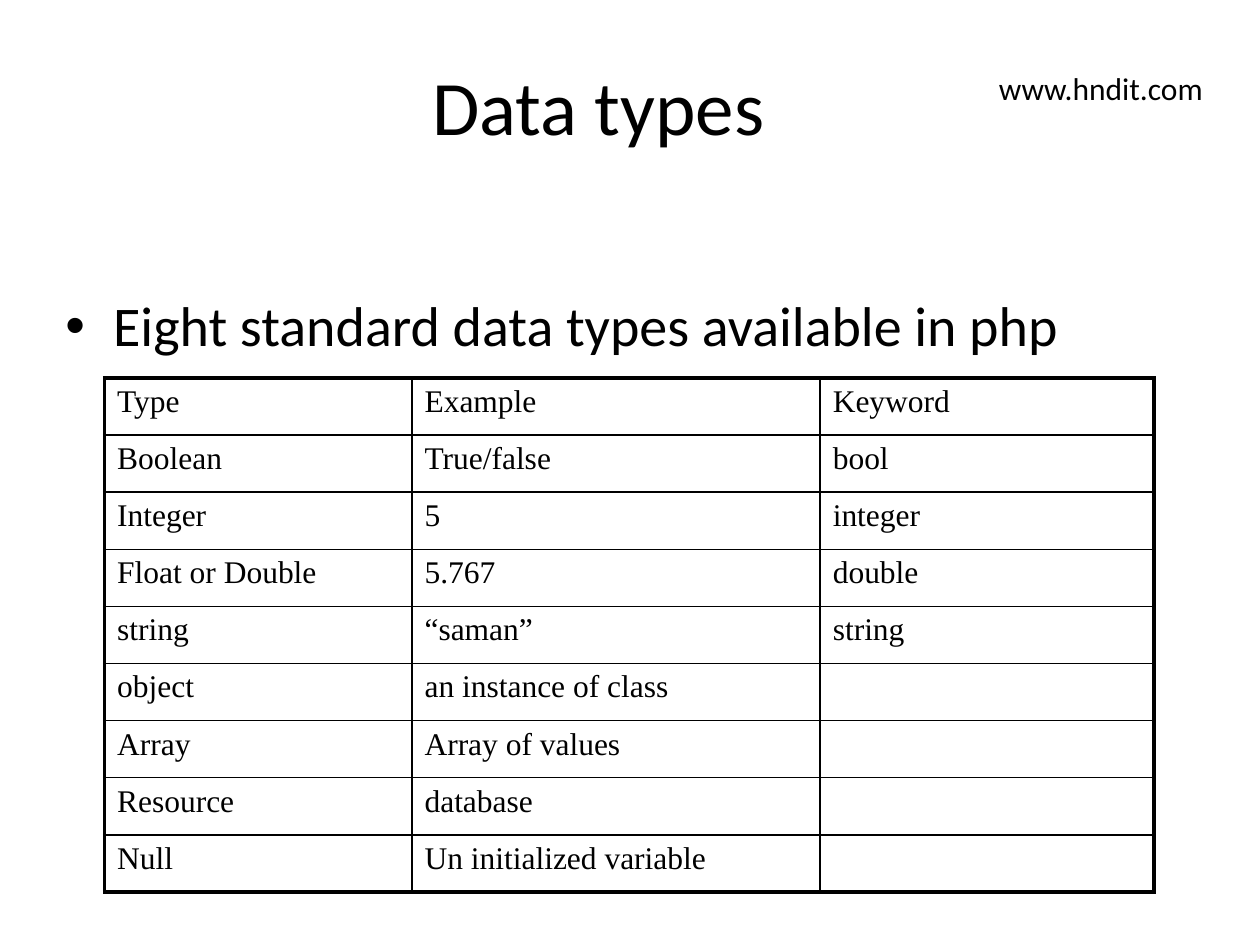
from pptx import Presentation
from pptx.dml.color import RGBColor
from pptx.enum.text import MSO_ANCHOR, PP_ALIGN
from pptx.oxml import parse_xml
from pptx.oxml.ns import nsdecls
from pptx.util import Inches, Pt

LEFT, CENTER = PP_ALIGN.LEFT, PP_ALIGN.CENTER
TOP, MIDDLE = MSO_ANCHOR.TOP, MSO_ANCHOR.MIDDLE

TITLE = "Data types"
SITE = "www.hndit.com"
POINT = "Eight standard data types available in php"
ROWS = [
    ("Type", "Example", "Keyword"),
    ("Boolean", "True/false", "bool"),
    ("Integer", "5", "integer"),
    ("Float or Double", "5.767", "double"),
    ("string", "“saman”", "string"),
    ("object", "an instance of class", ""),
    ("Array", "Array of values", ""),
    ("Resource", "database", ""),
    ("Null", "Un initialized variable", ""),
]
WIDTHS = (2.44, 3.24, 2.65)
GRID = (0.83, 3, sum(WIDTHS), 4.08)
THEME = {
    "ink": "000000", "sans": "Calibri", "serif": "Times New Roman",
    "title": 44, "body": 32, "small": 18,
    "outer": 2.25, "inner": 1,
}


def write(frame, text, size="small", font="sans", align=LEFT, bullet=False):
    par = frame.paragraphs[0]
    if bullet:
        props = par._p.get_or_add_pPr()
        indent = Inches(0.38)
        props.set("marL", str(indent))
        props.set("indent", str(-indent))
        props.append(parse_xml(f'<a:buFont {nsdecls("a")} typeface="Arial"/>'))
        props.append(parse_xml(f'<a:buChar {nsdecls("a")} char="•"/>'))
    par.alignment = align
    run = par.add_run()
    run.text = text
    run.font.name = THEME[font]
    run.font.size = Pt(THEME[size])
    run.font.color.rgb = RGBColor.from_string(THEME["ink"])


def add_box(slide, spot, text, anchor=TOP, wrap=True, inset=0.05, **style):
    frame = slide.shapes.add_textbox(*map(Inches, spot)).text_frame
    frame.word_wrap = wrap
    frame.vertical_anchor = anchor
    frame.margin_top = Inches(inset)
    write(frame, text, **style)


def edge(cell, sides):
    """Draw the cell's borders; sides maps L, R, T, B to True on the outer rim."""
    props = cell._tc.get_or_add_tcPr()
    for i, (side, rim) in enumerate(sides.items()):
        width = Pt(THEME["outer" if rim else "inner"])
        props.insert(i, parse_xml(
            f'<a:ln{side} {nsdecls("a")} w="{width}"><a:solidFill>'
            f'<a:srgbClr val="{THEME["ink"]}"/></a:solidFill></a:ln{side}>'))


def add_grid(slide):
    high, wide = len(ROWS), len(WIDTHS)
    table = slide.shapes.add_table(high, wide, *map(Inches, GRID)).table
    table.first_row = table.horz_banding = False
    for col, width in zip(table.columns, WIDTHS):
        col.width = Inches(width)
    for r, row in enumerate(ROWS):
        table.rows[r].height = Inches(GRID[3] / high)
        for c, text in enumerate(row):
            cell = table.cell(r, c)
            cell.fill.background()
            edge(cell, {"L": c == 0, "R": c == wide - 1,
                        "T": r == 0, "B": r == high - 1})
            if text:
                write(cell.text_frame, text, font="serif")


def main():
    deck = Presentation()
    deck.slide_width, deck.slide_height = Inches(10), Inches(7.5)
    slide = deck.slides.add_slide(deck.slide_layouts[6])
    add_box(slide, (0.5, 0.42, 8.5, 0.83), TITLE, anchor=MIDDLE,
            size="title", align=CENTER)
    add_box(slide, (0.42, 1.83, 9.5, 5.67), POINT, inset=0.48,
            size="body", bullet=True)
    add_grid(slide)
    add_box(slide, (7.83, 0.5, 1.82, 0.4), SITE, wrap=False)
    deck.save("out.pptx")


if __name__ == "__main__":
    main()
